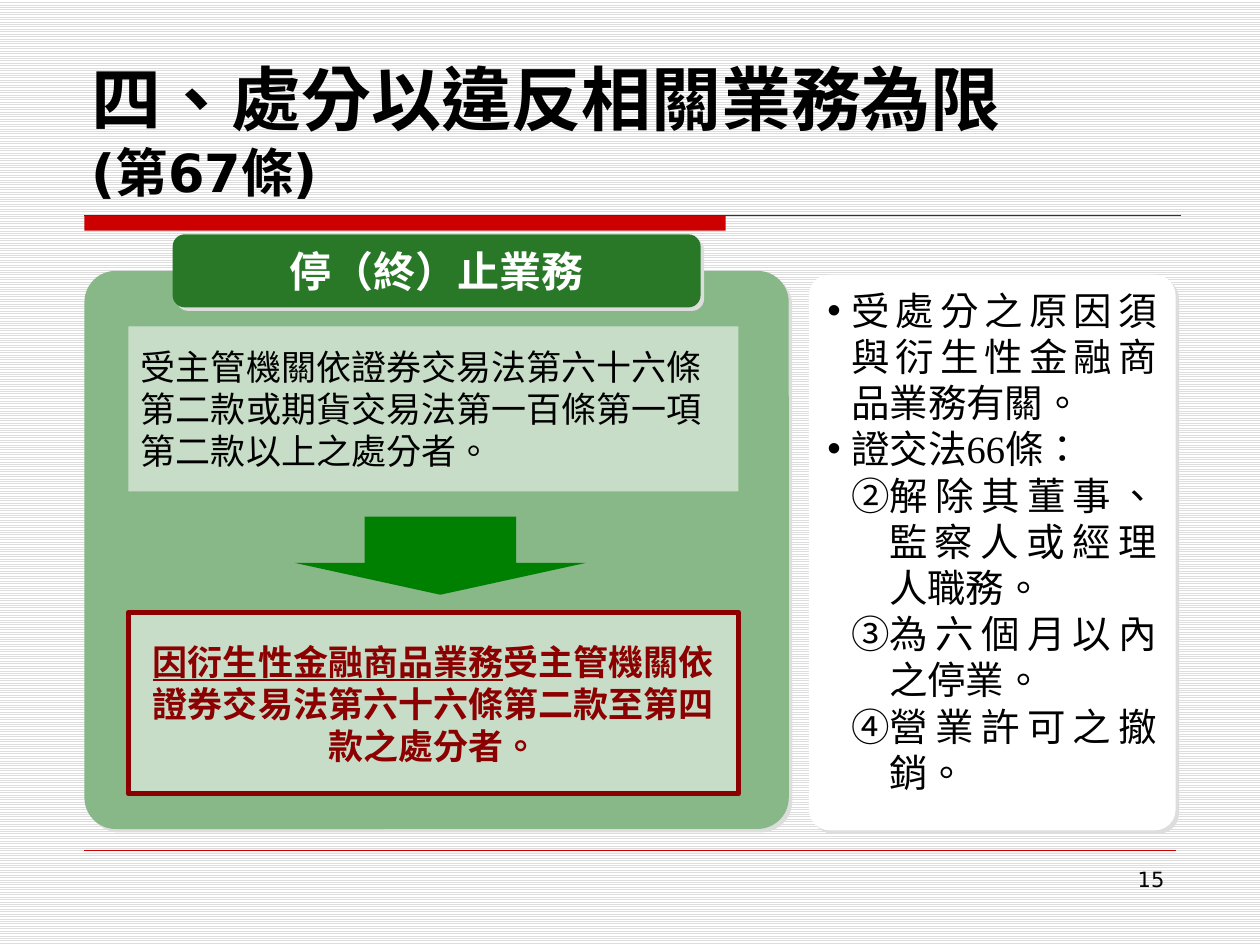
from dataclasses import dataclass

from lxml import etree
from pptx import Presentation
from pptx import util as u
from pptx.dml.color import RGBColor
from pptx.enum import dml, shapes, text
from pptx.oxml.ns import qn


@dataclass(frozen=True)
class Theme:
    """Colours, fonts and type sizes of the deck."""
    black: str = "000000"
    white: str = "FFFFFF"
    stripe: str = "DDDDDD"
    red: str = "CC0000"
    rule: str = "333333"
    panel: str = "88B888"
    banner: str = "287828"
    card: str = "C7DDC7"
    arrow: str = "008000"
    alert: str = "8B0000"
    serif: str = "Times New Roman"
    sans: str = "Arial"
    latin: str = "DejaVu Sans"
    cjk: str = "Noto Sans CJK SC"
    title: int = 40
    subtitle: int = 30
    heading: int = 24
    notes: int = 22
    body: int = 20
    number: int = 12


THEME = Theme()
PARTS = shapes.MSO_SHAPE
ALIGN = text.PP_ALIGN
LEADING = 1.2


def rgb(value):
    """Turn a hex string into a colour."""
    return RGBColor.from_string(value)


def add_run(paragraph, words, size, face, color=THEME.black, bold=False, underline=False):
    """Add one formatted run of Traditional Chinese text."""
    run = paragraph.add_run()
    run.text = words
    font = run.font
    font.size, font.name, font.bold = u.Pt(size), face, bold
    font.underline = underline
    font.color.rgb = rgb(color)
    properties = font._element
    properties.set("lang", "zh-TW")
    east_asian = etree.Element(qn("a:ea"), typeface=THEME.cjk)
    properties.find(qn("a:latin")).addnext(east_asian)


def set_paragraph(paragraph, size, align=ALIGN.LEFT):
    """Align a paragraph and fix its line pitch."""
    paragraph.alignment = align
    paragraph.line_spacing = u.Pt(round(size * LEADING, 1))


def add_block(slide, kind, box, fill, adjustments=(), shadow=False, outline=None):
    """Draw a filled preset shape in the box, with optional shadow and outline."""
    block = slide.shapes.add_shape(kind, *map(u.Inches, box))
    for index, value in enumerate(adjustments):
        block.adjustments[index] = value
    block.fill.solid()
    block.fill.fore_color.rgb = rgb(fill)
    block.shadow.inherit = False
    if outline:
        block.line.color.rgb = rgb(outline)
        block.line.width = u.Pt(3)
    else:
        block.line.fill.background()
    if shadow:
        effects = block._element.spPr.find(qn("a:effectLst"))
        outer = etree.SubElement(effects, qn("a:outerShdw"), dist=str(u.Pt(2.8)),
                                 dir="2700000", algn="ctr", rotWithShape="0")
        etree.SubElement(outer, qn("a:srgbClr"), val=THEME.stripe)
    return block


def add_rule(slide, left, top, width, color, weight):
    """Draw a horizontal rule."""
    rule = slide.shapes.add_connector(
        shapes.MSO_CONNECTOR.STRAIGHT, *map(u.Inches, (left, top, left + width, top)))
    rule.line.color.rgb = rgb(color)
    rule.line.width = u.Pt(weight)
    etree.SubElement(rule._element.spPr, qn("a:effectLst"))


def add_text_box(slide, box, anchor=text.MSO_ANCHOR.TOP):
    """Add a wrapping text box and return its first paragraph."""
    frame = slide.shapes.add_textbox(*map(u.Inches, box)).text_frame
    frame.word_wrap = True
    frame.vertical_anchor = anchor
    return frame.paragraphs[0]


def add_frame(slide):
    """Set the striped background and the rules above and below the content."""
    fill = slide.background.fill
    fill.patterned()
    fill.pattern = dml.MSO_PATTERN.LIGHT_HORIZONTAL
    fill.fore_color.rgb = rgb(THEME.stripe)
    fill.back_color.rgb = rgb(THEME.white)
    add_block(slide, PARTS.RECTANGLE, (0.67, 1.71, 5.09, 0.12), THEME.red)
    add_rule(slide, 0.67, 1.71, 8.7, THEME.rule, 0.75)
    add_rule(slide, 0.67, 6.75, 8.66, THEME.red, 0.25)


def add_title(slide, box):
    """Place the two-line title at the bottom of the box."""
    title = add_text_box(slide, box, text.MSO_ANCHOR.BOTTOM)
    set_paragraph(title, THEME.subtitle)
    add_run(title, "四、", THEME.title, THEME.serif, bold=True)
    add_run(title, "處分以違反相關業務為限", THEME.title, THEME.cjk, bold=True)
    title.add_line_break()
    add_run(title, "(第67條)", THEME.subtitle, THEME.latin, bold=True)


def add_card(slide, box, runs, align=ALIGN.LEFT, color=THEME.black, outline=None):
    """Place a pale card whose runs are (words, underlined) pairs."""
    card = add_block(slide, PARTS.RECTANGLE, box, THEME.card, outline=outline)
    card.text_frame.word_wrap = True
    card.text_frame.vertical_anchor = text.MSO_ANCHOR.MIDDLE
    paragraph = card.text_frame.paragraphs[0]
    set_paragraph(paragraph, THEME.body, align)
    for words, underlined in runs:
        add_run(paragraph, words, THEME.body, THEME.sans, color, bool(outline), underlined)


def add_suspension(slide, box):
    """Place the green panel with its banner, two cards and arrow."""
    left, top, width, height = box
    add_block(slide, PARTS.ROUNDED_RECTANGLE, box, THEME.panel, [0.056], shadow=True)
    banner = add_block(slide, PARTS.ROUNDED_RECTANGLE, (left + 0.7, top - 0.29, 4.19, 0.58),
                       THEME.banner, [0.167], shadow=True)
    banner.text_frame.word_wrap = False
    banner.text_frame.vertical_anchor = text.MSO_ANCHOR.MIDDLE
    heading = banner.text_frame.paragraphs[0]
    set_paragraph(heading, THEME.heading, ALIGN.CENTER)
    add_run(heading, "停（終）止業務", THEME.heading, THEME.serif, THEME.white, bold=True)

    card_left, card_width = left + 0.35, width - 0.75
    add_card(slide, (card_left, top + 0.44, card_width, 1.31), [
        ("受主管機關依證券交易法第六十六條第二款或期貨交易法第一百條第一項第二款以上之處分者。", False)])
    add_card(slide, (card_left, top + 2.71, card_width, 1.44), [
        ("因衍生性金融商品業務", True),
        ("受主管機關依證券交易法第六十六條第二款至第四款之處分者。", False),
    ], ALIGN.CENTER, THEME.alert, THEME.alert)
    add_block(slide, PARTS.DOWN_ARROW, (left + 1.67, top + 1.95, 2.31, 0.62),
              THEME.arrow, [0.521, 0.407])


def set_marker(paragraph, margin, hanging, numbered):
    """Give a paragraph a hanging bullet or a circled number counted from 2."""
    properties = paragraph._p.get_or_add_pPr()
    properties.set("marL", str(u.Inches(margin)))
    properties.set("indent", str(-u.Inches(hanging)))
    if numbered:
        etree.SubElement(properties, qn("a:buAutoNum"),
                         type="circleNumWdWhitePlain", startAt="2")
    else:
        etree.SubElement(properties, qn("a:buFont"), typeface=THEME.sans)
        etree.SubElement(properties, qn("a:buChar"), char="•")


def add_notes(slide, box):
    """Place the white panel with the bulleted and numbered remarks."""
    panel = add_block(slide, PARTS.ROUNDED_RECTANGLE, box, THEME.white, [0.056], shadow=True)
    frame = panel.text_frame
    frame.word_wrap = True
    frame.vertical_anchor = text.MSO_ANCHOR.TOP
    remarks = [
        ("受處分之原因須與衍生性金融商品業務有關。", False),
        ("證交法66條：", False),
        ("解除其董事、監察人或經理人職務。", True),
        ("為六個月以內之停業。", True),
        ("營業許可之撤銷。", True),
    ]
    for index, (words, numbered) in enumerate(remarks):
        remark = frame.add_paragraph() if index else frame.paragraphs[0]
        set_marker(remark, *((0.49, 0.3) if numbered else (0.19, 0.19)), numbered)
        set_paragraph(remark, THEME.notes, ALIGN.JUSTIFY)
        add_run(remark, words, THEME.notes, THEME.serif)


def add_page_number(slide, box):
    """Place the page number at the right of the box."""
    number = add_text_box(slide, box)
    number.alignment = ALIGN.RIGHT
    add_run(number, "15", THEME.number, THEME.latin)


def main():
    """Build the slide and save it."""
    deck = Presentation()
    deck.slide_width, deck.slide_height = u.Inches(10), u.Inches(7.5)
    slide = deck.slides.add_slide(deck.slide_layouts[6])
    add_frame(slide)
    add_title(slide, (0.63, 0.33, 8.78, 1.33))
    add_page_number(slide, (7.17, 6.83, 2.17, 0.52))
    add_suspension(slide, (0.67, 2.15, 5.59, 4.43))
    add_notes(slide, (6.42, 2.18, 2.91, 4.41))
    deck.save("out.pptx")


if __name__ == "__main__":
    main()
